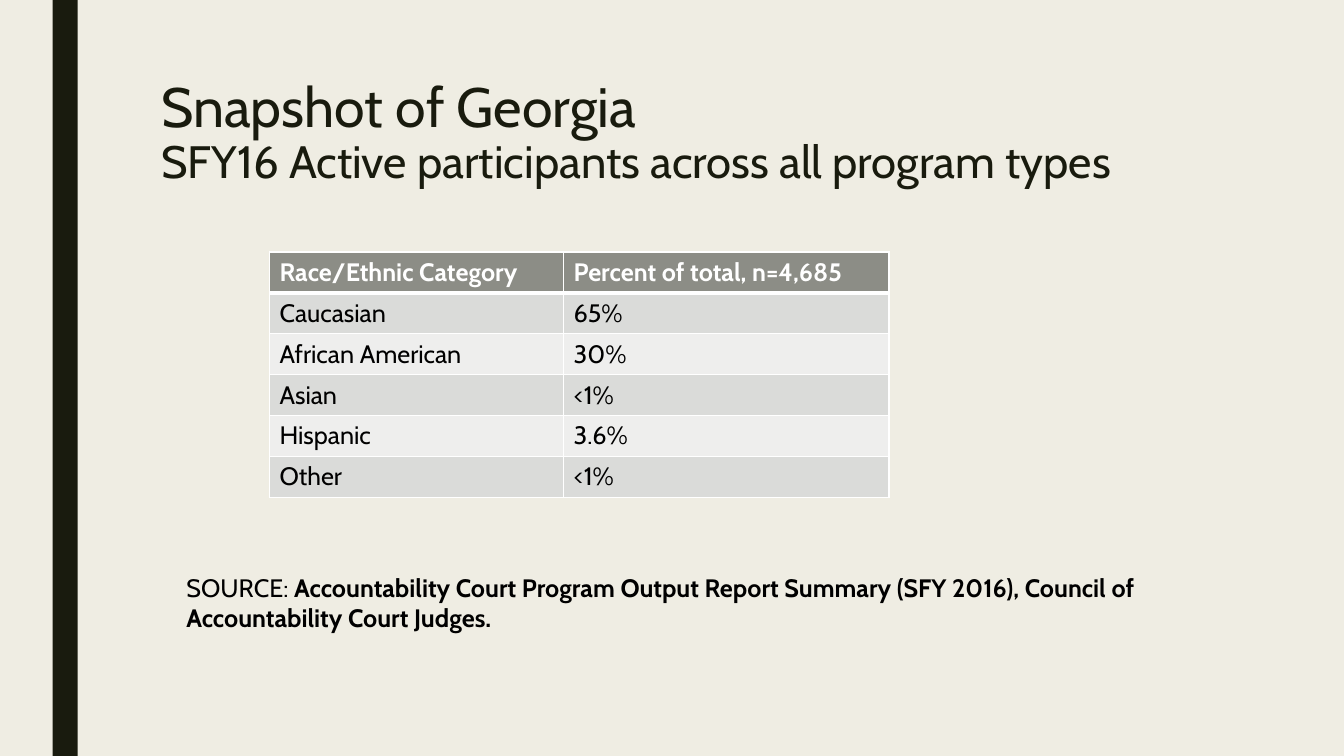
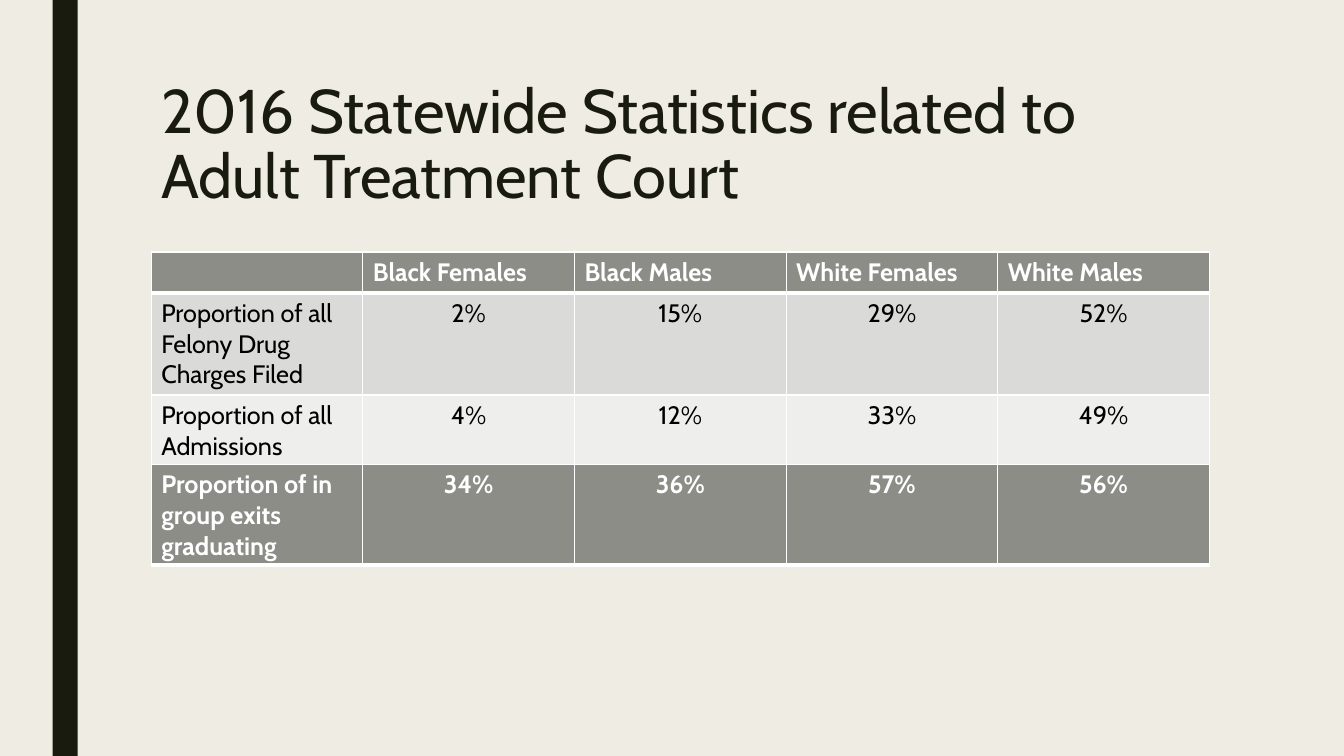
from dataclasses import dataclass

from lxml import etree
from pptx import Presentation
from pptx.dml.color import RGBColor
from pptx.enum.shapes import MSO_SHAPE
from pptx.enum.text import PP_ALIGN
from pptx.oxml.ns import qn
from pptx.util import Pt

RECT = MSO_SHAPE.RECTANGLE
LEFT, CENTER = PP_ALIGN.LEFT, PP_ALIGN.CENTER


@dataclass(frozen=True)
class Theme:
    font: str = "Cabin"
    paper: str = "EFEDE3"
    ink: str = "191B0E"
    head: str = "8C8D86"
    bands: tuple = ("DADBD9", "EEEEED")
    white: str = "FFFFFF"
    black: str = "000000"
    title: float = 44
    upper: float = 39.6
    lower: float = 32.4
    body: float = 18
    thin: float = 1
    thick: float = 3


class Deck:
    def __init__(self, theme):
        self.theme = theme
        self.prs = Presentation()
        self.prs.slide_width, self.prs.slide_height = Pt(960), Pt(540)
        self.paint(self.prs.slide_master.background.fill, theme.paper)
        self.slide = None

    def paint(self, fill, color):
        fill.solid()
        fill.fore_color.rgb = RGBColor.from_string(color)

    def run(self, para, text, size, color, bold=False):
        run = para.add_run()
        run.text = text
        font = run.font
        font.name, font.size, font.bold = self.theme.font, Pt(size), bold
        font.color.rgb = RGBColor.from_string(color)

    # Slide with the dark side band
    def page(self):
        self.slide = self.prs.slides.add_slide(self.prs.slide_layouts[6])
        band = self.slide.shapes.add_shape(RECT, Pt(37.5), Pt(0), Pt(18), Pt(540))
        band.shadow.inherit = False
        self.paint(band.fill, self.theme.ink)
        band.line.fill.background()

    def box(self, left, top, width, height):
        shape = self.slide.shapes.add_textbox(Pt(left), Pt(top), Pt(width), Pt(height))
        shape.text_frame.word_wrap = True
        return shape.text_frame.paragraphs[0]

    # Title lines are pairs of text and size
    def title(self, *lines):
        para = self.box(108, 54, 756, 117)
        para.line_spacing = 0.89
        for i, (text, size) in enumerate(lines):
            if i:
                para.add_line_break()
            self.run(para, text, size, self.theme.ink)

    def note(self, label, text):
        para = self.box(126, 405, 711, 51)
        self.run(para, label, self.theme.body, self.theme.black)
        self.run(para, text, self.theme.body, self.theme.black, True)

    def edges(self, cell, top, base):
        thin = self.theme.thin
        props = cell._tc.get_or_add_tcPr()
        for side, width in zip("LRTB", (thin, thin, top, base)):
            line = etree.SubElement(props, qn(f"a:ln{side}"), w=str(Pt(width)))
            fill = etree.SubElement(line, qn("a:solidFill"))
            etree.SubElement(fill, qn("a:srgbClr"), val=self.theme.white)

    # Table with a dark first row and banded rows below
    def table(self, left, top, cols, heights, rows, align=LEFT):
        look = self.theme
        frame = self.slide.shapes.add_table(
            len(rows), len(cols), Pt(left), Pt(top), Pt(sum(cols)), Pt(sum(heights)))
        grid = frame.table
        grid.horz_banding = False
        for col, width in zip(grid.columns, cols):
            col.width = Pt(width)
        for r, (row, height) in enumerate(zip(rows, heights)):
            grid.rows[r].height = Pt(height)
            head = r == 0
            fill = look.head if head else look.bands[(r - 1) % 2]
            color = look.white if head else look.black
            for c, text in enumerate(row):
                cell = grid.cell(r, c)
                self.edges(cell, look.thick if r == 1 else look.thin,
                           look.thick if head else look.thin)
                self.paint(cell.fill, fill)
                para = cell.text_frame.paragraphs[0]
                # Only cells holding figures follow the given alignment
                para.alignment = align if text.endswith("%") else LEFT
                if text:
                    self.run(para, text, look.body, color, head)


def main():
    theme = Theme()
    deck = Deck(theme)
    line = 29.2

    # Slide 1: participants by category
    deck.page()
    deck.title(("Snapshot of Georgia", theme.upper),
               ("SFY16 Active participants across all program types", theme.lower))
    races = [
        ("Race/Ethnic Category", "Percent of total, n=4,685"),
        ("Caucasian", "65%"),
        ("African American", "30%"),
        ("Asian", "<1%"),
        ("Hispanic", "3.6%"),
        ("Other", "<1%"),
    ]
    deck.table(192.5, 180, (210, 232.5), [line] * len(races), races)
    deck.note("SOURCE: ", "Accountability Court Program Output Report Summary "
              "(SFY 2016), Council of Accountability Court Judges.")

    # Slide 2: court figures, with the exit rates in a strip below
    deck.page()
    deck.title(("2016 Statewide Statistics related to Adult Treatment Court", theme.title))
    shares = [
        ("", "Black Females", "Black Males", "White Females", "White Males"),
        ("Proportion of all Felony Drug Charges Filed", "2%", "15%", "29%", "52%"),
        ("Proportion of all Admissions", "4%", "12%", "33%", "49%"),
    ]
    exits = [("Proportion of in group exits graduating", "34%", "36%", "57%", "56%")]
    cols, top, highs = [151.2] * 5, 180, (line, 73, 49.5)
    deck.table(108, top, cols, highs, shares, CENTER)
    deck.table(108, top + sum(highs), cols, [72], exits, CENTER)

    deck.prs.save("out.pptx")


if __name__ == "__main__":
    main()
